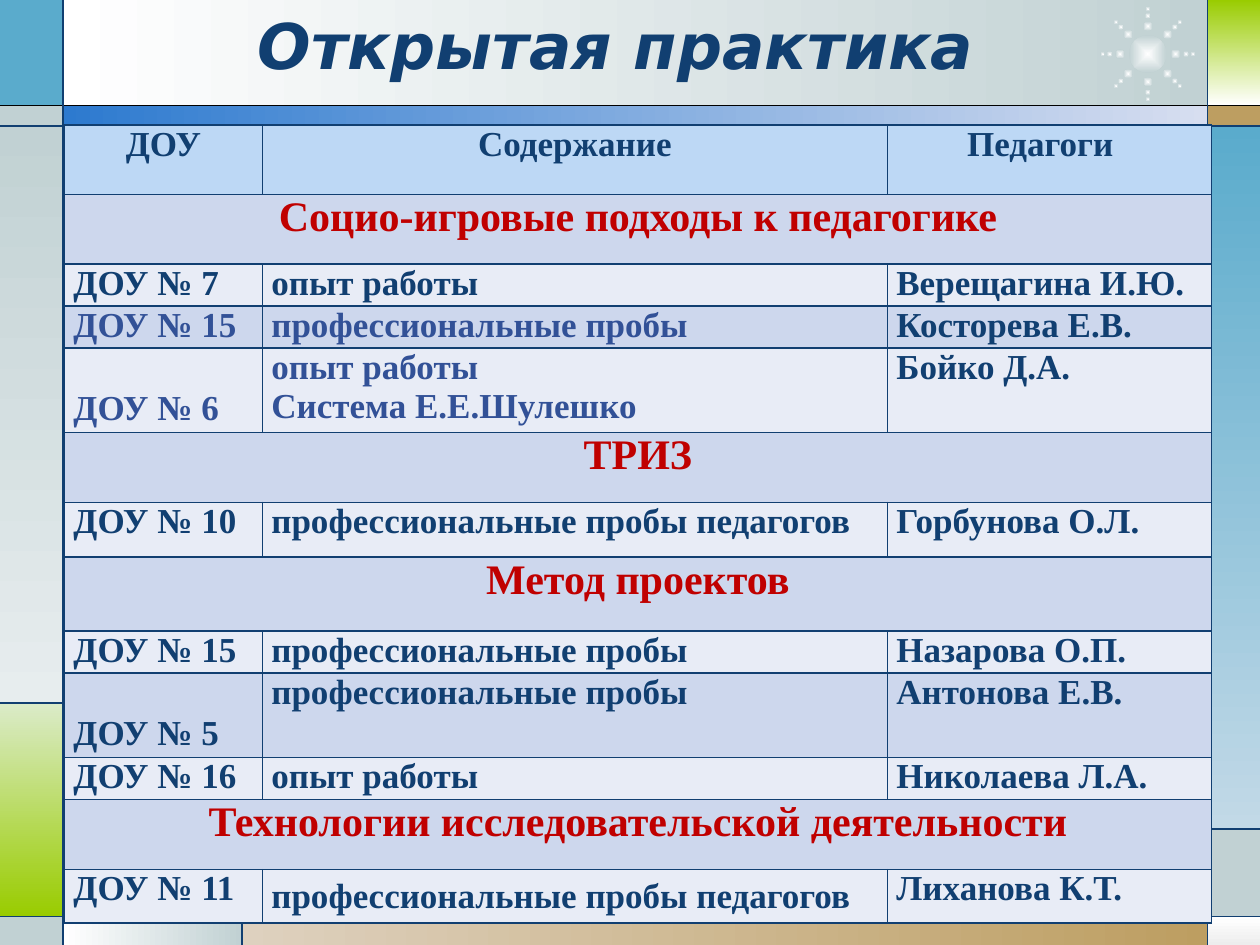
from math import cos, pi, sin

from pptx import Presentation
from pptx.dml.color import RGBColor
from pptx.enum.shapes import MSO_CONNECTOR as Connector, MSO_SHAPE as Shape
from pptx.enum.text import MSO_ANCHOR as Anchor, PP_ALIGN as Align
from pptx.oxml import parse_xml
from pptx.oxml.ns import nsdecls, qn
from pptx.util import Cm, Pt

WHITE = RGBColor(0xFF, 0xFF, 0xFF)
BLACK = RGBColor(0x00, 0x00, 0x00)
NAVY = RGBColor(0x11, 0x3F, 0x71)
BLUE = RGBColor(0x32, 0x51, 0x97)
RED = RGBColor(0xC0, 0x00, 0x00)
TEAL = RGBColor(0x5A, 0xAB, 0xCC)
PALE_TEAL = RGBColor(0xC2, 0xD9, 0xE7)
GREY = RGBColor(0xC1, 0xD1, 0xD3)
PALE_GREY = RGBColor(0xE7, 0xED, 0xEE)
SILVER = RGBColor(0xED, 0xED, 0xED)
GREEN = RGBColor(0x99, 0xCC, 0x00)
PALE_GREEN = RGBColor(0xDB, 0xEB, 0xC9)
TAN = RGBColor(0xBD, 0x9E, 0x61)
PALE_TAN = RGBColor(0xDE, 0xD1, 0xBF)
ROYAL = RGBColor(0x2D, 0x7A, 0xCF)
PALE_ROYAL = RGBColor(0xD7, 0xDE, 0xF0)
HEADER_FILL = RGBColor(0xBD, 0xD8, 0xF5)
BANDS = (RGBColor(0xE8, 0xEC, 0xF6), RGBColor(0xCD, 0xD7, 0xED))

# Frame edges in centimetres
WIDTH, HEIGHT = 25.4, 19.05
LEFT, RIGHT = 1.27, 24.34
TOP, BAR, BOTTOM = 2.12, 2.54, 18.47
GREEN_TOP, GREY_TOP, TAN_LEFT = 14.17, 16.71, 4.88

TITLE = {"size": Pt(36), "name": "DejaVu Sans", "bold": True, "italic": True}
BODY = {"size": Pt(20), "name": "Times New Roman", "bold": True}
SECTION = BODY | {"size": Pt(24)}

COLUMNS = (3.99, 12.6, 6.53)
# Row height and its cells; a single cell is a section heading
ROWS = (
    (1.40, ("ДОУ", "Содержание", "Педагоги")),
    (1.40, ("Социо-игровые подходы к педагогике",)),
    (0.85, ("ДОУ № 7", "опыт работы", "Верещагина И.Ю.")),
    (0.85, ("ДОУ № 15", "профессиональные пробы", "Косторева Е.В.")),
    (1.70, ("ДОУ № 6", "опыт работы\nСистема Е.Е.Шулешко", "Бойко Д.А.")),
    (1.41, ("ТРИЗ",)),
    (1.10, ("ДОУ № 10", "профессиональные пробы педагогов", "Горбунова О.Л.")),
    (1.49, ("Метод проектов",)),
    (0.85, ("ДОУ № 15", "профессиональные пробы", "Назарова О.П.")),
    (1.70, ("ДОУ № 5", "профессиональные пробы", "Антонова Е.В.")),
    (0.85, ("ДОУ № 16", "опыт работы", "Николаева Л.А.")),
    (1.41, ("Технологии исследовательской деятельности",)),
    (1.08, ("ДОУ № 11", "профессиональные пробы педагогов", "Лиханова К.Т.")),
)
BLUE_ROWS = (3, 4)
CELL_FORMATS = {
    (0, 2): {"margin_right": Cm(0.55)},
    (4, 0): {"vertical_anchor": Anchor.BOTTOM, "margin_bottom": Cm(0.08)},
    (9, 0): {"vertical_anchor": Anchor.BOTTOM, "margin_bottom": Cm(0.08)},
    (12, 1): {"vertical_anchor": Anchor.MIDDLE},
}


def apply(target, formats):
    for name, value in formats.items():
        setattr(target, name, value)


class SlideBuilder:
    """Holds the slide and the line style shared by its elements."""

    line_color = NAVY
    line_width = Pt(0.75)
    border_width = Pt(1)
    cell_margins = {"margin_left": Cm(0.18), "margin_right": Cm(0.18),
                    "margin_top": 0, "margin_bottom": 0}

    def __init__(self, slide):
        self.slide = slide

    def paint(self, shape, colors, angle=0):
        shape.shadow.inherit = False
        shape.line.fill.background()
        if len(colors) == 1:
            shape.fill.solid()
            shape.fill.fore_color.rgb = colors[0]
            return
        shape.fill.gradient()
        shape.fill.gradient_angle = angle
        for stop, color in zip(shape.fill.gradient_stops, colors):
            stop.color.rgb = color

    def panel(self, left, top, right, bottom, *colors, angle=0):
        shape = self.slide.shapes.add_shape(
            Shape.RECTANGLE, Cm(left), Cm(top), Cm(right - left), Cm(bottom - top))
        self.paint(shape, colors, angle)

    def line(self, x1, y1, x2, y2, color=None):
        connector = self.slide.shapes.add_connector(
            Connector.STRAIGHT, Cm(x1), Cm(y1), Cm(x2), Cm(y2))
        connector.line.color.rgb = color or self.line_color
        connector.line.width = self.line_width
        connector._element.spPr.append(parse_xml(f"<a:effectLst {nsdecls('a')}/>"))

    def dot(self, group, x, y, size):
        shape = group.shapes.add_shape(
            Shape.OVAL, Cm(x - size / 2), Cm(y - size / 2), Cm(size), Cm(size))
        self.paint(shape, (WHITE, GREY))
        linear = shape._element.spPr.find(qn("a:gradFill")).find(qn("a:lin"))
        linear.getparent().replace(linear, parse_xml(
            f'<a:path {nsdecls("a")} path="shape">'
            '<a:fillToRect l="50000" t="50000" r="50000" b="50000"/></a:path>'))

    def sunburst(self, x, y, core, rays, dots):
        group = self.slide.shapes.add_group_shape()
        self.dot(group, x, y, core)
        for ray in range(rays):
            angle = 2 * pi * ray / rays
            for radius, size in dots:
                self.dot(group, x + radius * cos(angle), y + radius * sin(angle), size)

    def fill_text(self, frame, text, formats, color, align):
        frame.text = text
        for paragraph in frame.paragraphs:
            paragraph.alignment = align
            for run in paragraph.runs:
                apply(run.font, formats)
                run.font.color.rgb = color

    def title(self, left, top, width, height, text):
        box = self.slide.shapes.add_textbox(Cm(left), Cm(top), Cm(width), Cm(height))
        box.text_frame.word_wrap = True
        self.fill_text(box.text_frame, text, TITLE, NAVY, Align.LEFT)

    def border(self, cell):
        properties = cell._tc.get_or_add_tcPr()
        for index, side in enumerate(("lnL", "lnR", "lnT", "lnB")):
            properties.insert(index, parse_xml(
                f'<a:{side} {nsdecls("a")} w="{self.border_width}"><a:solidFill>'
                f'<a:srgbClr val="{self.line_color}"/></a:solidFill></a:{side}>'))

    def table(self, left, top, columns, rows):
        height = sum(row_height for row_height, _ in rows)
        table = self.slide.shapes.add_table(
            len(rows), len(columns), Cm(left), Cm(top), Cm(sum(columns)), Cm(height)).table
        apply(table, {"first_row": False, "horz_banding": False})
        for column, width in zip(table.columns, columns):
            column.width = Cm(width)
        for r, (row_height, texts) in enumerate(rows):
            table.rows[r].height = Cm(row_height)
            section = len(texts) == 1
            if section:
                table.cell(r, 0).merge(table.cell(r, len(columns) - 1))
            for c, cell in enumerate(table.rows[r].cells):
                apply(cell, self.cell_margins | CELL_FORMATS.get((r, c), {}))
                cell.fill.solid()
                cell.fill.fore_color.rgb = BANDS[r % 2] if r else HEADER_FILL
                self.border(cell)
                if c < len(texts):
                    blue = r in BLUE_ROWS and c < 2
                    self.fill_text(cell.text_frame, texts[c], SECTION if section else BODY,
                                   RED if section else BLUE if blue else NAVY,
                                   Align.CENTER if section or r == 0 else Align.JUSTIFY)


def main():
    presentation = Presentation()
    apply(presentation, {"slide_width": Cm(WIDTH), "slide_height": Cm(HEIGHT)})
    builder = SlideBuilder(presentation.slides.add_slide(presentation.slide_layouts[6]))

    # Left frame, header and footer panels
    builder.panel(LEFT, 0, RIGHT, TOP, WHITE, GREY)
    builder.panel(0, 0, LEFT, TOP, TEAL)
    builder.panel(0, TOP, LEFT, BAR, GREY)
    builder.panel(0, BAR, LEFT, GREEN_TOP, GREY, PALE_GREY, angle=270)
    builder.panel(0, GREEN_TOP, LEFT, BOTTOM, PALE_GREEN, GREEN, angle=270)
    builder.panel(0, BOTTOM, LEFT, HEIGHT, GREY)
    builder.panel(LEFT, BOTTOM, TAN_LEFT, HEIGHT, WHITE, GREY)
    builder.panel(TAN_LEFT, BOTTOM, RIGHT, HEIGHT, PALE_TAN, TAN)

    # Right frame and blue bar
    builder.panel(RIGHT, BOTTOM, WIDTH, HEIGHT, WHITE, SILVER, angle=270)
    builder.panel(RIGHT, GREY_TOP, WIDTH, BOTTOM, GREY)
    builder.panel(RIGHT, BAR, WIDTH, GREY_TOP, TEAL, PALE_TEAL, angle=270)
    builder.panel(RIGHT, TOP, WIDTH, BAR, TAN)
    builder.panel(RIGHT, 0, WIDTH, TOP, GREEN, WHITE, angle=270)
    builder.panel(LEFT, TOP, RIGHT, BAR, ROYAL, PALE_ROYAL)

    # Sunburst ornament
    builder.sunburst(23.14, 1.09, 0.76, 8, ((0.56, 0.19), (0.77, 0.12), (0.91, 0.09)))

    # Frame lines
    builder.line(0, TOP, WIDTH, TOP, BLACK)
    for y in (BAR, BOTTOM):
        builder.line(0, y, WIDTH, y)
    for x in (LEFT, RIGHT):
        builder.line(x, 0, x, HEIGHT)
    builder.line(LEFT, GREEN_TOP, 0, GREEN_TOP)
    builder.line(TAN_LEFT, BOTTOM, TAN_LEFT, HEIGHT)
    builder.line(RIGHT, GREY_TOP, WIDTH, GREY_TOP)

    # Title and table
    builder.title(4.95, 0, 19.84, 1.8, "Открытая практика")
    builder.table(1.3, 2.52, COLUMNS, ROWS)

    presentation.save("out.pptx")


if __name__ == "__main__":
    main()
